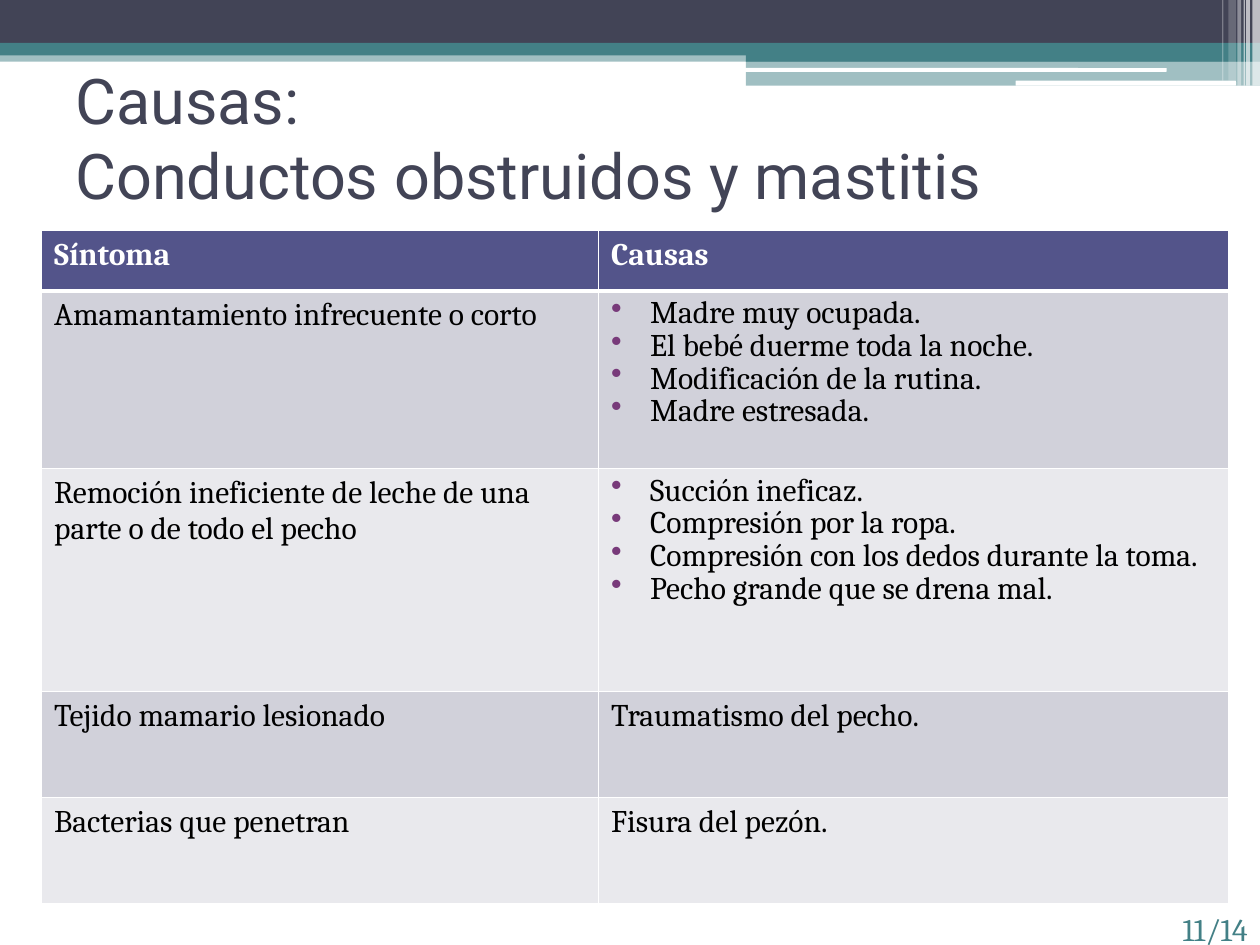
from lxml import etree
from pptx import Presentation
from pptx.dml.color import RGBColor
from pptx.enum.shapes import MSO_SHAPE
from pptx.enum.text import MSO_ANCHOR, PP_ALIGN
from pptx.oxml.ns import qn
from pptx.util import Inches, Pt

RECTANGLE, ROUNDED = MSO_SHAPE.RECTANGLE, MSO_SHAPE.ROUNDED_RECTANGLE
TOP, MIDDLE = MSO_ANCHOR.TOP, MSO_ANCHOR.MIDDLE
LEFT, RIGHT = PP_ALIGN.LEFT, PP_ALIGN.RIGHT

WIDTH, HEIGHT = 10, 7.5
NAVY, TEAL, WHITE, BLACK = "424456", "438086", "FFFFFF", "000000"
HEADER_FILL, ROW_FILLS, BULLET = "53548A", ("E9E9ED", "D1D1DA"), "783A7A"
BODY_FONT = {"name": "Cambria", "size": Pt(18)}
BULLET_INDENT = 0.31

BAND_START = 5.92
# left, top, width, height, colour, opacity in percent
BANDS = [
    (0, 0.4, WIDTH, 0.09, TEAL, 50),
    (0, 0, WIDTH, 0.34, NAVY, 100),
    (0, 0.34, WIDTH, 0.1, TEAL, 100),
    (BAND_START, 0.39, WIDTH - BAND_START, 0.1, TEAL, 100),
    (BAND_START, 0.48, WIDTH - BAND_START, 0.2, TEAL, 50),
]
WHITE_BARS = [(5.91, 0.54, 3.35, 0.03), (8.06, 0.64, 1.75, 0.04)]
# left, width, height, opacity in percent
STRIPES = [
    (9.94, 0.06, 0.68, 65), (9.89, 0.03, 0.68, 65), (9.87, 0.01, 0.68, 60),
    (9.82, 0.03, 0.68, 40), (9.75, 0.06, 0.64, 20), (9.7, 0.01, 0.64, 30),
]

COLUMN_WIDTHS = [4.42, 5]
ROW_HEIGHTS = [0.48, 1.41, 1.77, 0.84, 0.84]
# A list of causes is bulleted, a single string is plain
ROWS = [
    ("Síntoma", "Causas"),
    ("Amamantamiento infrecuente o corto",
     ["Madre muy ocupada.", "El bebé duerme toda la noche.",
      "Modificación de la rutina.", "Madre estresada."]),
    ("Remoción ineficiente de leche de una parte o de todo el pecho",
     ["Succión ineficaz.", "Compresión por la ropa.",
      "Compresión con los dedos durante la toma.",
      "Pecho grande que se drena mal."]),
    ("Tejido mamario lesionado", "Traumatismo del pecho."),
    ("Bacterias que penetran", "Fisura del pezón."),
]


def rgb(colour):
    return RGBColor.from_string(colour)


def paint(fill, colour):
    fill.solid()
    fill.fore_color.rgb = rgb(colour)


def style_font(font, colour, **values):
    for name, value in values.items():
        setattr(font, name, value)
    font.color.rgb = rgb(colour)


def add_bar(slide, left, top, width, height, colour, opacity=100, kind=RECTANGLE):
    shape = slide.shapes.add_shape(kind, *map(Inches, (left, top, width, height)))
    shape.shadow.inherit = False
    shape.line.fill.background()
    paint(shape.fill, colour)
    if opacity < 100:
        colour_element = shape.fill._xPr.find(".//" + qn("a:srgbClr"))
        etree.SubElement(colour_element, qn("a:alpha"), val=str(opacity * 1000))


def add_text(slide, box, text, anchor, alignment, colour, **font):
    frame = slide.shapes.add_textbox(*map(Inches, box)).text_frame
    frame.word_wrap = True
    frame.vertical_anchor = anchor
    paragraph = frame.paragraphs[0]
    paragraph.text = text
    paragraph.alignment = alignment
    for run in paragraph.runs:
        style_font(run.font, colour, **font)


def add_bullet(paragraph):
    paragraph.line_spacing = 0.9
    properties = paragraph._p.get_or_add_pPr()
    properties.set("marL", str(Inches(BULLET_INDENT)))
    properties.set("indent", str(-Inches(BULLET_INDENT)))
    colour = etree.SubElement(properties, qn("a:buClr"))
    etree.SubElement(colour, qn("a:srgbClr"), val=BULLET)
    etree.SubElement(properties, qn("a:buChar"), char="•")


def set_borders(cell, **widths):
    """Draw white cell borders; widths in points are keyed L, R, T and B."""
    properties = cell._tc.get_or_add_tcPr()
    for index, (side, width) in enumerate(widths.items()):
        line = etree.Element(qn(f"a:ln{side}"), w=str(Pt(width)))
        fill = etree.SubElement(line, qn("a:solidFill"))
        etree.SubElement(fill, qn("a:srgbClr"), val=WHITE)
        properties.insert(index, line)


def fill_cell(cell, content, row):
    header = row == 0
    paint(cell.fill, HEADER_FILL if header else ROW_FILLS[row % 2])
    set_borders(cell, L=1, R=1, T=3 if row == 1 else 1, B=3 if header else 1)
    bulleted = isinstance(content, list)
    cell.text = "\n".join(content) if bulleted else content
    for paragraph in cell.text_frame.paragraphs:
        style_font(paragraph.runs[0].font, WHITE if header else BLACK,
                   bold=header, **BODY_FONT)
        if bulleted:
            add_bullet(paragraph)


def add_causes_table(slide, left, top):
    size = sum(COLUMN_WIDTHS), sum(ROW_HEIGHTS)
    table = slide.shapes.add_table(
        len(ROWS), len(COLUMN_WIDTHS), *map(Inches, (left, top, *size))).table
    for column, width in zip(table.columns, COLUMN_WIDTHS):
        column.width = Inches(width)
    for row, height in zip(table.rows, ROW_HEIGHTS):
        row.height = Inches(height)
    for row, contents in enumerate(ROWS):
        for column, content in enumerate(contents):
            fill_cell(table.cell(row, column), content, row)


def add_header_decoration(slide):
    for band in BANDS:
        add_bar(slide, *band)
    for bar in WHITE_BARS:
        add_bar(slide, *bar, WHITE, kind=ROUNDED)
    for left, width, height, opacity in STRIPES:
        add_bar(slide, left, 0, width, height, WHITE, opacity)


def main():
    presentation = Presentation()
    presentation.slide_width, presentation.slide_height = Inches(WIDTH), Inches(HEIGHT)
    slide = presentation.slides.add_slide(presentation.slide_layouts[6])
    add_header_decoration(slide)
    add_text(slide, (0.5, 0.5, 9, 1.17), "Causas:\vConductos obstruidos y mastitis",
             MIDDLE, LEFT, NAVY, name="Roboto", size=Pt(36))
    add_causes_table(slide, 0.33, 1.83)
    add_text(slide, (8.58, 7.17, 1.42, 0.33), "11/14", TOP, RIGHT, TEAL, **BODY_FONT)
    presentation.save("out.pptx")


if __name__ == "__main__":
    main()
